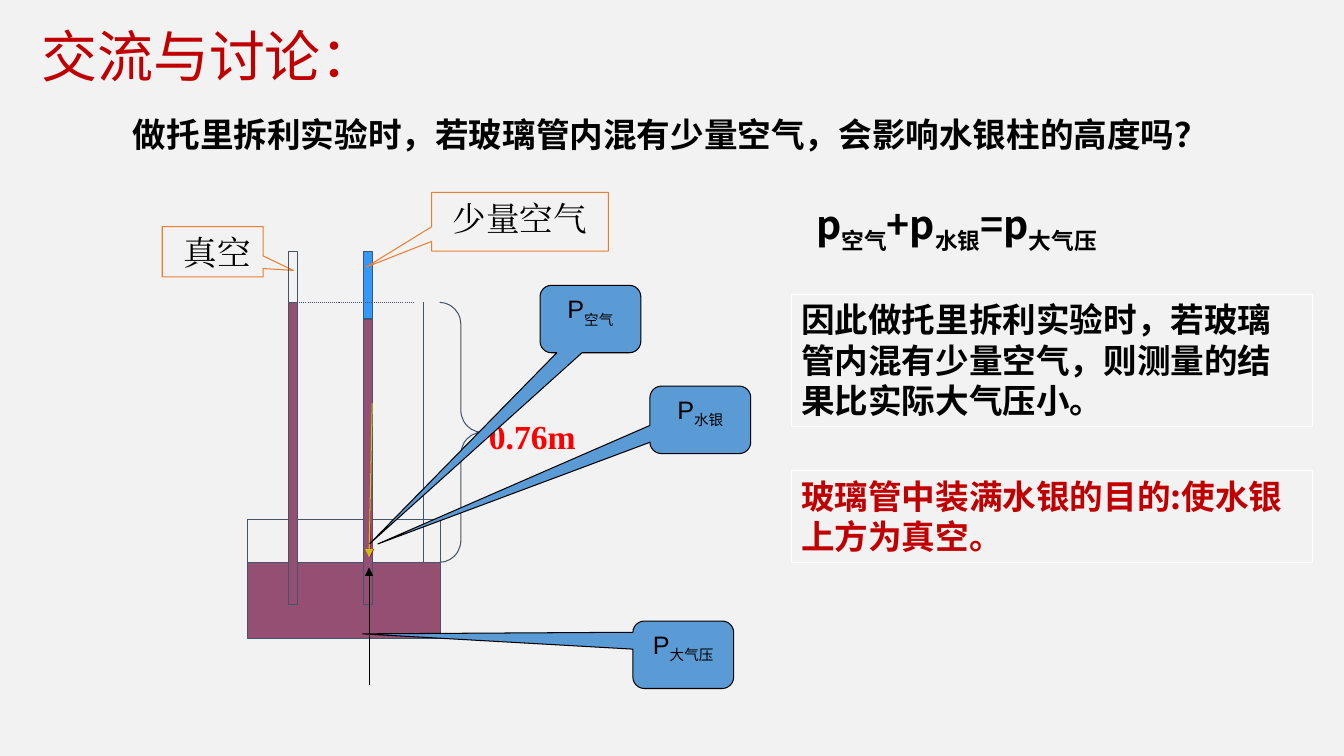
from lxml.etree import SubElement
from pptx import Presentation
from pptx.dml.color import RGBColor
from pptx.enum.dml import MSO_LINE
from pptx.enum.shapes import MSO_CONNECTOR, MSO_SHAPE as Kind
from pptx.enum.text import MSO_ANCHOR, PP_ALIGN as Align
from pptx.oxml.ns import qn
from pptx.util import Cm, Pt

PALE = RGBColor(0xF2, 0xF2, 0xF2)
WHITE = RGBColor(0xFF, 0xFF, 0xFF)
BLACK = RGBColor(0, 0, 0)
RED = RGBColor(0xC0, 0, 0)
BRIGHT = RGBColor(0xFF, 0, 0)
ORANGE = RGBColor(0xED, 0x7D, 0x31)
SLATE = RGBColor(0x44, 0x54, 0x6A)
PLUM = RGBColor(0x95, 0x4F, 0x72)
AIR = RGBColor(0x33, 0x99, 0xFF)
BLUE = RGBColor(0x5B, 0x9B, 0xD5)
CRIMSON = RGBColor(0xC9, 0x0B, 0x41)
YELLOW = RGBColor(0xCB, 0xC2, 0x09)

SANS = "Noto Sans CJK SC"
TITLE = "Noto Sans CJK JP"
SERIF = "Times New Roman"
LATIN = "Arial"


def spot(box, x, y, w, h):
    """Turn an offset within a box, in cm, into slide lengths."""
    return Cm(box[0] + x), Cm(box[1] + y), Cm(w), Cm(h)


def write(shape, parts, face, size, color=BLACK, bold=False,
          align=Align.LEFT, wrap=True):
    """Write runs into a shape; every second run is a subscript."""
    frame = shape.text_frame
    frame.word_wrap = wrap
    frame.vertical_anchor = MSO_ANCHOR.TOP
    para = frame.paragraphs[0]
    para.alignment = align
    if face in (SANS, TITLE):
        para.line_spacing = Pt(size * 1.2)
    font = para.font
    font.name, font.size, font.bold = face, Pt(size), bold
    font.color.rgb = color
    props = para._p.pPr.find(qn("a:defRPr"))
    SubElement(props, qn("a:ea")).set("typeface", face)
    for i, part in enumerate(parts):
        run = para.add_run()
        run.text = part
        if i % 2:
            run._r.get_or_add_rPr().set("baseline", "-25000")


def label(slide, place, *parts, **style):
    write(slide.shapes.add_textbox(*place), parts, **style)


def draw(slide, kind, place, line, fill=None, adjust=()):
    shape = slide.shapes.add_shape(kind, *place)
    shape.shadow.inherit = False
    shape.line.color.rgb = line
    shape.line.width = Pt(0.75)
    if fill is None:
        shape.fill.background()
    else:
        shape.fill.solid()
        shape.fill.fore_color.rgb = fill
    for i, value in enumerate(adjust):
        shape.adjustments[i] = value
    return shape


def rule(slide, box, start, end, color, dash=None, arrow=False):
    (x1, y1), (x2, y2) = start, end
    link = slide.shapes.add_connector(
        MSO_CONNECTOR.STRAIGHT, Cm(box[0] + x1), Cm(box[1] + y1),
        Cm(box[0] + x2), Cm(box[1] + y2))
    link.line.color.rgb = color
    link.line.width = Pt(0.75)
    if dash:
        link.line.dash_style = dash
    props = link._element.spPr
    if arrow:
        SubElement(props.find(qn("a:ln")), qn("a:tailEnd")).set("type", "triangle")
    SubElement(props, qn("a:effectLst"))


def heading(slide, box):
    label(slide, spot(box, 0, 0, 8.97, 1.96), "交流与讨论：",
          face=TITLE, size=40, color=RED, wrap=False)
    label(slide, spot(box, 2.31, 2.31, 27.69, 1.27),
          "做托里拆利实验时，若玻璃管内混有少量空气，会影响水银柱的高度吗？",
          face=SANS, size=24, bold=True)


def setup(slide, box):
    """Draw the trough, both tubes and the height mark."""
    top, mark, level, foot = 1.5, 2.77, 9.32, 10.39
    rim = 8.25
    word = dict(face=SERIF, size=24, align=Align.CENTER)
    draw(slide, Kind.RECTANGULAR_CALLOUT, spot(box, 0.2, 0.86, 2.54, 1.27),
         ORANGE, adjust=(0.8, 0.37))
    label(slide, spot(box, 7.62, 5.51, 3.81, 1.27), "0.76m",
          color=BRIGHT, bold=True, **word)
    for y, end, fill in ((level, 11.23, PLUM), (rim, level, None)):
        draw(slide, Kind.RECTANGLE, spot(box, 2.34, y, 4.88, end - y), SLATE, fill)
    for x, split, gas in ((3.38, mark, None), (5.28, 3.19, AIR)):
        for y, end, fill in ((split, foot, PLUM), (top, split, gas)):
            draw(slide, Kind.RECTANGLE, spot(box, x, y, 0.22, end - y), SLATE, fill)
    rule(slide, box, (3.6, mark), (6.55, mark), SLATE, dash=MSO_LINE.ROUND_DOT)
    rule(slide, box, (6.78, mark), (6.78, level), SLATE)
    draw(slide, Kind.RIGHT_BRACE, spot(box, 7.19, mark, 1.07, level - mark),
         SLATE, adjust=(0.52, 0.5))
    air = draw(slide, Kind.RECTANGULAR_CALLOUT, spot(box, 6.99, 0, 4.45, 1.48),
               ORANGE, adjust=(-0.87, 0.77))
    write(air, ["少量空气"], **word)
    label(slide, spot(box, 0, 0.86, 3.18, 1.27), "真空", **word)


def forces(slide, box):
    """Draw the pressure arrows and their callouts."""
    for start, end, color in (
            ((5.44, 6.86), (5.44, 9.19), CRIMSON),
            ((5.49, 5.31), (5.41, 9.19), YELLOW),
            ((5.41, 12.42), (5.41, 9.45), BLACK)):
        rule(slide, box, start, end, color, arrow=True)
    for x, y, tip, name in (
            (9.72, 2.34, (-2.19, 3.33), "空气"),
            (12.49, 4.88, (-3.2, 1.84), "水银"),
            (12.06, 10.8, (-3.18, -0.31), "大气压")):
        shape = draw(slide, Kind.ROUNDED_RECTANGULAR_CALLOUT,
                     spot(box, x, y, 2.54, 1.7), BLACK, BLUE, (*tip, 0.17))
        write(shape, ["P", name], LATIN, 18, align=Align.CENTER)


def result(slide, box):
    label(slide, spot(box, 0.38, 0, 10.24, 1.45),
          "p", "空气", "+p", "水银", "=p", "大气压",
          face=SANS, size=28, bold=True)
    for y, high, color, text in (
            (2.34, 3.33, BLACK,
             "因此做托里拆利实验时，若玻璃管内混有少量空气，则测量的结果比实际大气压小。"),
            (6.78, 2.31, RED, "玻璃管中装满水银的目的:使水银上方为真空。")):
        note = draw(slide, Kind.RECTANGLE, spot(box, 0, y, 13.13, high), WHITE)
        write(note, [text], SANS, 24, color, bold=True)


def main():
    deck = Presentation()
    deck.slide_width, deck.slide_height = Cm(33.87), Cm(19.05)
    slide = deck.slides.add_slide(deck.slide_layouts[6])
    slide.background.fill.solid()
    slide.background.fill.fore_color.rgb = PALE
    heading(slide, (0.79, 0.43))
    setup(slide, (3.89, 4.85))
    forces(slide, (3.89, 4.85))
    result(slide, (19.94, 5.08))
    deck.save("out.pptx")


if __name__ == "__main__":
    main()
